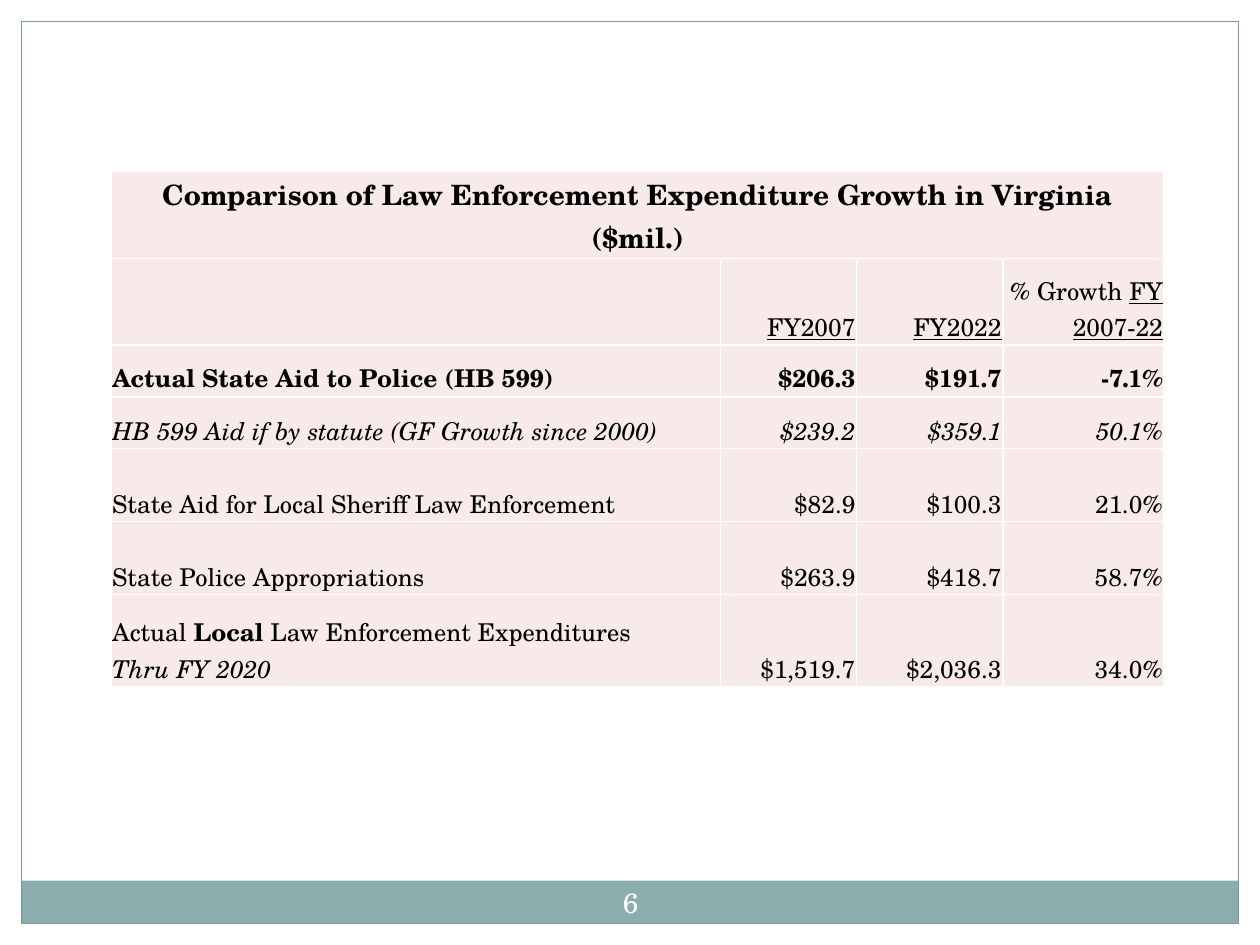
import pptx
import pptx.util
import pptx.dml.color
import pptx.enum.shapes
import pptx.enum.text
import pptx.oxml
from dataclasses import dataclass
from pptx.oxml.ns import nsdecls
from pptx.util import Inches

RGBColor = pptx.dml.color.RGBColor
ALIGN = pptx.enum.text.PP_ALIGN
ANCHOR = pptx.enum.text.MSO_ANCHOR

WHITE = RGBColor(0xFF, 0xFF, 0xFF)
BLACK = RGBColor(0, 0, 0)
TEAL = RGBColor(0x8C, 0xAD, 0xAE)
FRAME = RGBColor(0x7C, 0x99, 0x9A)
BLUSH = RGBColor(0xF7, 0xEA, 0xE9)
FONT = "TeX Gyre Schola"


@dataclass
class Box:
    left: float
    top: float
    width: float
    height: float
    fill: RGBColor | None = None
    line: RGBColor | None = None


@dataclass
class Row:
    label: str
    values: tuple[str, str, str]
    bold: bool = False
    italic: bool = False


BOXES = [
    Box(0, 0, 10, 0.17, WHITE),
    Box(9.83, 0, 0.17, 7.5, WHITE),
    Box(0, 0, 0.17, 7.5, WHITE),
    Box(0.17, 6.99, 9.66, 0.34, TEAL),
    Box(0.17, 0.17, 9.66, 7.16, line=FRAME),
]
COL_WIDTHS = [4.84, 1.08, 1.16, 1.28]
ROW_HEIGHTS = [0.69, 0.69, 0.41, 0.41, 0.58, 0.58, 0.73]
TITLE = "Comparison of Law Enforcement Expenditure Growth in Virginia ($mil.)"
ROWS = [
    Row("Actual State Aid to Police (HB 599)", ("$206.3", "$191.7", "-7.1%"), bold=True),
    Row("HB 599 Aid if by statute (GF Growth since 2000)",
        ("$239.2", "$359.1", "50.1%"), italic=True),
    Row("State Aid for Local Sheriff Law Enforcement", ("$82.9", "$100.3", "21.0%")),
    Row("State Police Appropriations", ("$263.9", "$418.7", "58.7%")),
    Row("Actual ", ("$1,519.7", "$2,036.3", "34.0%")),
]


def add_text(p, text: str, size: float = 14, color: RGBColor = BLACK, bold: bool = False,
             italic: bool = False, underline: bool = False, align=None) -> None:
    r = p.add_run()
    r.text = text
    f = r.font
    f.name, f.size = FONT, pptx.util.Pt(size)
    f.bold, f.italic, f.underline = bold, italic, underline
    f.color.rgb = color
    if align is not None:
        p.alignment = align


def add_box(s, box: Box) -> None:
    sp = s.shapes.add_shape(pptx.enum.shapes.MSO_SHAPE.RECTANGLE, Inches(box.left),
                            Inches(box.top), Inches(box.width), Inches(box.height))
    sp.shadow.inherit = False
    if box.fill is None:
        sp.fill.background()
    else:
        sp.fill.solid()
        sp.fill.fore_color.rgb = box.fill
    if box.line is None:
        sp.line.fill.background()
    else:
        sp.line.color.rgb = box.line
        sp.line.width = pptx.util.Pt(1)


def format_cell(cell) -> None:
    cell.margin_left = cell.margin_right = cell.margin_top = Inches(0.01)
    cell.margin_bottom = 0
    cell.vertical_anchor = ANCHOR.BOTTOM
    tcPr = cell._tc.get_or_add_tcPr()
    for side in ("lnL", "lnR", "lnT", "lnB"):
        tcPr.append(pptx.oxml.parse_xml(
            f'<a:{side} {nsdecls("a")} w="12700"><a:solidFill>'
            f'<a:srgbClr val="{WHITE}"/></a:solidFill></a:{side}>'))
    cell.fill.solid()
    cell.fill.fore_color.rgb = BLUSH


def add_expenditure_table(s) -> None:
    tbl = s.shapes.add_table(len(ROW_HEIGHTS), len(COL_WIDTHS), Inches(0.88), Inches(1.36),
                             Inches(sum(COL_WIDTHS)), Inches(sum(ROW_HEIGHTS))).table
    tbl.first_row = tbl.horz_banding = False
    for col, width in zip(tbl.columns, COL_WIDTHS):
        col.width = Inches(width)
    for row, height in zip(tbl.rows, ROW_HEIGHTS):
        row.height = Inches(height)
    for cell in tbl.iter_cells():
        format_cell(cell)

    def first_p(row: int, col: int):
        return tbl.cell(row, col).text_frame.paragraphs[0]

    # Title and column headings
    tbl.cell(0, 0).merge(tbl.cell(0, len(COL_WIDTHS) - 1))
    add_text(first_p(0, 0), TITLE, size=16, bold=True, align=ALIGN.CENTER)
    add_text(first_p(1, 3), "% Growth ")
    for j, heading in enumerate(("FY2007", "FY2022", "FY 2007-22"), 1):
        add_text(first_p(1, j), heading, underline=True, align=ALIGN.RIGHT)

    # Expenditure rows
    for i, row in enumerate(ROWS, 2):
        style = dict(bold=row.bold, italic=row.italic)
        add_text(first_p(i, 0), row.label, **style)
        for j, value in enumerate(row.values, 1):
            add_text(first_p(i, j), value, align=ALIGN.RIGHT, **style)

    # Rest of the mixed-format label in the last row
    last = len(ROW_HEIGHTS) - 1
    add_text(first_p(last, 0), "Local", bold=True)
    add_text(first_p(last, 0), " Law Enforcement Expenditures")
    add_text(tbl.cell(last, 0).text_frame.add_paragraph(), "Thru FY 2020", italic=True)


def add_page_number(s, number: str) -> None:
    tf = s.shapes.add_textbox(Inches(4.67), Inches(6.92), Inches(0.67), Inches(0.48)).text_frame
    tf.word_wrap = True
    tf.vertical_anchor = ANCHOR.MIDDLE
    tf.margin_left = tf.margin_right = tf.margin_top = tf.margin_bottom = Inches(0.05)
    add_text(tf.paragraphs[0], number, size=16, color=WHITE, align=ALIGN.CENTER)


def main() -> None:
    prs = pptx.Presentation()
    prs.slide_width, prs.slide_height = Inches(10), Inches(7.5)
    s = prs.slides.add_slide(prs.slide_layouts[6])
    # Margins, footer bar and frame
    for box in BOXES:
        add_box(s, box)
    add_page_number(s, "6")
    add_expenditure_table(s)
    prs.save("out.pptx")


if __name__ == "__main__":
    main()
